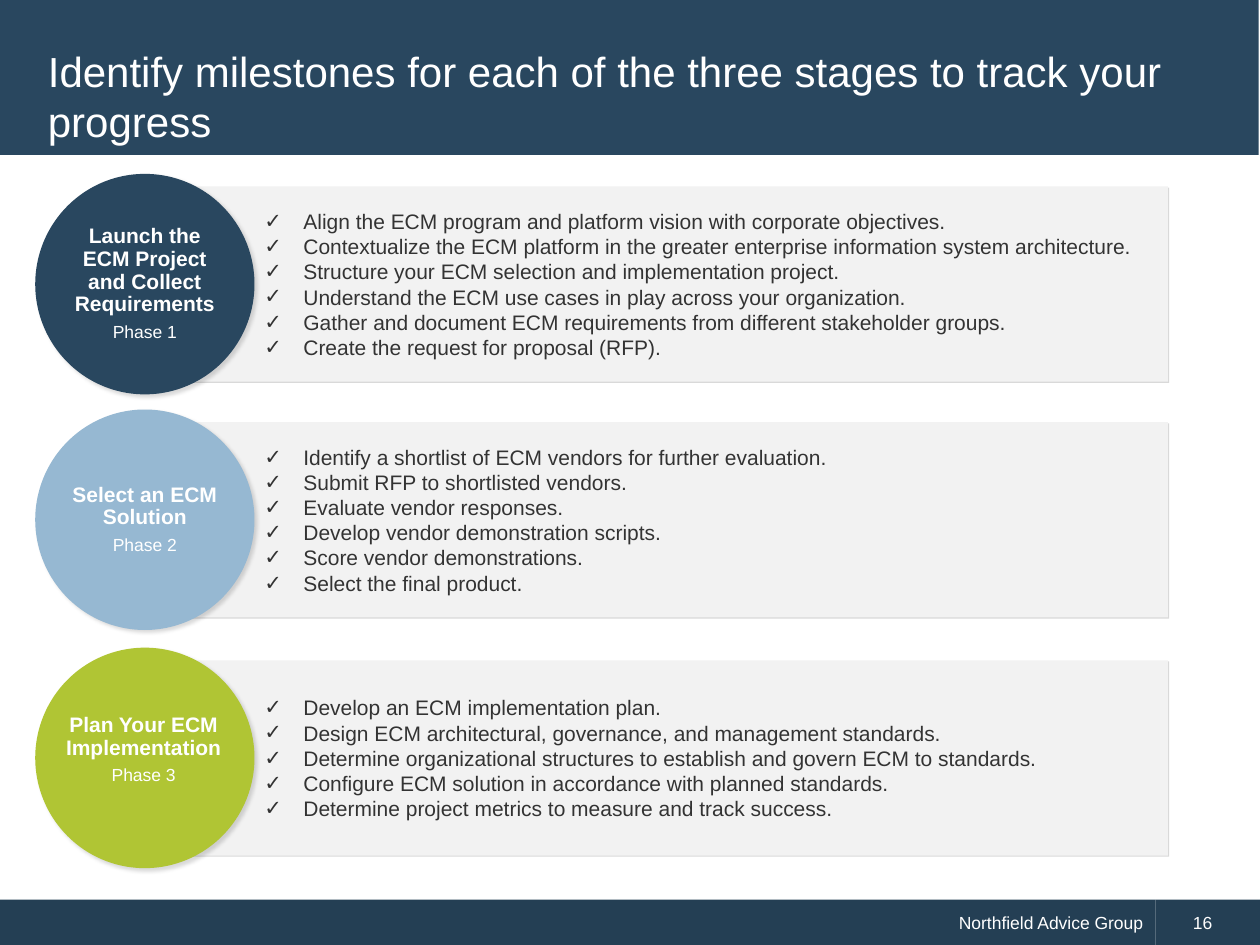
from dataclasses import dataclass

from lxml.etree import SubElement
from pptx import Presentation
from pptx.dml.color import RGBColor
from pptx.enum.shapes import MSO_SHAPE
from pptx.enum.text import MSO_ANCHOR, PP_ALIGN
from pptx.oxml.ns import qn
from pptx.util import Inches, Pt


@dataclass(frozen=True)
class Theme:
    font: str = "Arial"
    navy: str = "29475F"
    footer: str = "243F54"
    blue: str = "96B8D2"
    green: str = "B0C534"
    panel: str = "F2F2F2"
    text: str = "333333"
    white: str = "FFFFFF"
    title_size: int = 24
    body_size: int = 12
    small_size: int = 10


@dataclass(frozen=True)
class Stage:
    name: str
    phase: str
    color: str
    top: float
    milestones: tuple[str, ...]
    wide_label: bool = False  # label needs more width than the circle's text area


T = Theme()
CIRCLE_W, CIRCLE_H = 1.74, 1.75
PANEL_H = 1.55

STAGES = (
    Stage("Launch the ECM Project and Collect Requirements", "Phase 1", T.navy, 1.38, (
        "Align the ECM program and platform vision with corporate objectives.",
        "Contextualize the ECM platform in the greater enterprise information system architecture.",
        "Structure your ECM selection and implementation project.",
        "Understand the ECM use cases in play across your organization.",
        "Gather and document ECM requirements from different stakeholder groups.",
        "Create the request for proposal (RFP).",
    )),
    Stage("Select an ECM Solution", "Phase 2", T.blue, 3.25, (
        "Identify a shortlist of ECM vendors for further evaluation.",
        "Submit RFP to shortlisted vendors.",
        "Evaluate vendor responses.",
        "Develop vendor demonstration scripts.",
        "Score vendor demonstrations.",
        "Select the final product.",
    )),
    Stage("Plan Your ECM Implementation", "Phase 3", T.green, 5.14, (
        "Develop an ECM implementation plan.",
        "Design ECM architectural, governance, and management standards.",
        "Determine organizational structures to establish and govern ECM to standards.",
        "Configure ECM solution in accordance with planned standards.",
        "Determine project metrics to measure and track success.",
    ), wide_label=True),
)


def add_run(p, text: str, size: int, color: str, bold: bool = False) -> None:
    r = p.add_run()
    r.text = text
    r.font.name = T.font
    r.font.size = Pt(size)
    r.font.bold = bold
    r.font.color.rgb = RGBColor.from_string(color)


def add_block(s, kind, x: float, y: float, w: float, h: float, color: str):
    sp = s.shapes.add_shape(kind, Inches(x), Inches(y), Inches(w), Inches(h))
    sp.fill.solid()
    sp.fill.fore_color.rgb = RGBColor.from_string(color)
    sp.line.fill.background()
    sp.shadow.inherit = False
    sp.text_frame.word_wrap = True
    sp.text_frame.vertical_anchor = MSO_ANCHOR.MIDDLE
    return sp


def add_shadow(sp, blur: float, dist: float, alpha: int) -> None:
    effects = sp._element.spPr.find(qn("a:effectLst"))
    shadow = SubElement(effects, qn("a:outerShdw"), blurRad=str(Pt(blur)),
                        dist=str(Pt(dist)), dir="2700000", algn="tl", rotWithShape="0")
    color = SubElement(shadow, qn("a:srgbClr"), val="000000")
    SubElement(color, qn("a:alpha"), val=str(alpha * 1000))


def set_indent(p, left: float, first: float = 0, bullet: str = "") -> None:
    pPr = p._p.get_or_add_pPr()
    pPr.set("marL", str(Inches(left)))
    pPr.set("indent", str(Inches(first)))
    if bullet:
        SubElement(pPr, qn("a:buFont"), typeface=T.font)
        SubElement(pPr, qn("a:buChar"), char=bullet)


def add_footer_cell(s, x: float, w: float, text: str, align, indent: float) -> None:
    sp = add_block(s, MSO_SHAPE.RECTANGLE, x, 7.14, w, 0.37, T.footer)
    p = sp.text_frame.paragraphs[0]
    p.alignment = align
    set_indent(p, indent)
    add_run(p, text, T.small_size, T.white)


def add_panel(s, stage: Stage) -> None:
    y = stage.top + (CIRCLE_H - PANEL_H) / 2
    sp = add_block(s, MSO_SHAPE.RECTANGLE, 1.33, y, 7.94, PANEL_H, T.panel)
    add_shadow(sp, 0, 1, 14)
    tf = sp.text_frame
    for i, milestone in enumerate(stage.milestones):
        p = tf.add_paragraph() if i else tf.paragraphs[0]
        p.alignment = PP_ALIGN.LEFT
        set_indent(p, 0.98, -0.31, "✓")
        add_run(p, milestone, T.body_size, T.text)


def add_circle(s, stage: Stage) -> None:
    sp = add_block(s, MSO_SHAPE.OVAL, 0.28, stage.top, CIRCLE_W, CIRCLE_H, stage.color)
    add_shadow(sp, 2, 2, 15)
    if stage.wide_label:
        sp = s.shapes.add_textbox(Inches(0.32), Inches(stage.top + 0.48),
                                  Inches(1.64), Inches(0.72))
    tf = sp.text_frame
    tf.word_wrap = True
    if not stage.wide_label:
        tf.margin_left = tf.margin_right = tf.margin_top = tf.margin_bottom = 0
    name, phase = tf.paragraphs[0], tf.add_paragraph()
    for p in (name, phase):
        p.alignment = PP_ALIGN.CENTER
        p.line_spacing = 0.9
        p.space_after = Pt(4)
    add_run(name, stage.name, T.body_size, T.white, bold=True)
    add_run(phase, stage.phase, T.small_size, T.white)


def add_title(s, text: str) -> None:
    add_block(s, MSO_SHAPE.RECTANGLE, -0.01, 0, 10, 1.23, T.navy)
    title = s.shapes.title
    s.shapes._spTree.append(title._element)  # bring in front of the band
    title.left, title.top = Inches(0.28), Inches(0.28)
    title.width, title.height = Inches(9.43), Inches(0.96)
    tf = title.text_frame
    tf.word_wrap = True
    tf.vertical_anchor = MSO_ANCHOR.MIDDLE
    p = tf.paragraphs[0]
    p.alignment = PP_ALIGN.LEFT
    add_run(p, text, T.title_size, T.white)


def main() -> None:
    prs = Presentation()
    prs.slide_width, prs.slide_height = Inches(10), Inches(7.5)
    s = prs.slides.add_slide(prs.slide_layouts[5])

    # Footer
    add_footer_cell(s, 0, 9.17, "Northfield Advice Group", PP_ALIGN.RIGHT, 0.29)
    add_footer_cell(s, 9.17, 0.83, "16", PP_ALIGN.LEFT, 0.2)

    # Title band
    add_title(s, "Identify milestones for each of the three stages to track your progress")

    # Stages: a milestone panel behind each circle
    for stage in STAGES:
        add_panel(s, stage)
        add_circle(s, stage)

    prs.save("out.pptx")


if __name__ == "__main__":
    main()
